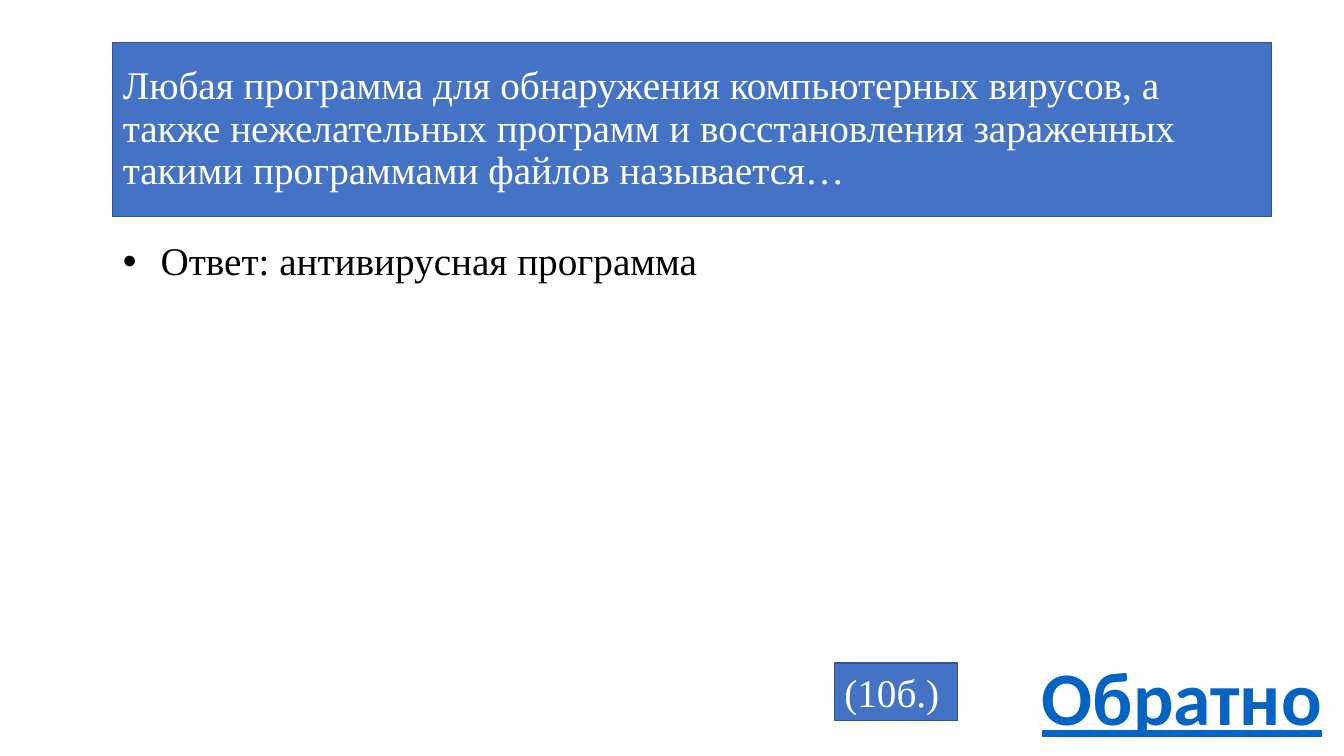
import pptx
import pptx.dml.color
import pptx.enum.shapes
import pptx.enum.text
import pptx.oxml
import pptx.oxml.ns
import pptx.util
from pptx.util import Cm

COLORS = {
    "panel": "4472C4",
    "border": "325491",
    "light": "FFFFFF",
    "dark": "000000",
    "link": "0563C1",
    "link_outline": "8497B0",
}
ALIGN = pptx.enum.text.PP_ALIGN
ANCHOR = pptx.enum.text.MSO_ANCHOR
AUTO_SIZE = pptx.enum.text.MSO_AUTO_SIZE


def rgb(name):
    """Return the named colour."""
    return pptx.dml.color.RGBColor.from_string(COLORS[name])


def place(shape, left, top, width, height):
    """Move and size a shape."""
    shape.left, shape.top, shape.width, shape.height = left, top, width, height


def paint_panel(shape):
    """Give a shape the blue fill and thin border."""
    shape.fill.solid()
    shape.fill.fore_color.rgb = rgb("panel")
    shape.line.color.rgb = rgb("border")
    shape.line.width = pptx.util.Pt(1)


def write_text(shape, text, color, size=28, font_name="Times New Roman",
               align=ALIGN.LEFT, anchor=ANCHOR.TOP, auto_size=AUTO_SIZE.NONE,
               wrap=True, line_spacing=1.0):
    """Write one formatted paragraph and return it."""
    frame = shape.text_frame
    frame.text = text
    frame.word_wrap = wrap
    frame.auto_size = auto_size
    frame.vertical_anchor = anchor
    paragraph = frame.paragraphs[0]
    paragraph.alignment = align
    paragraph.line_spacing = line_spacing
    paragraph.space_before = pptx.util.Pt(0)
    paragraph.font.name = font_name
    paragraph.font.size = pptx.util.Pt(size)
    paragraph.font.color.rgb = rgb(color)
    return paragraph


def remove_bullet(paragraph):
    """Remove the bullet and hanging indent of a paragraph."""
    properties = paragraph._p.get_or_add_pPr()
    properties.set("marL", "0")
    properties.set("indent", "0")
    properties.append(pptx.oxml.parse_xml(
        f"<a:buNone {pptx.oxml.ns.nsdecls('a')}/>"))


def outline_text(paragraph, color, width):
    """Draw a thin outline around the letters of a paragraph."""
    outline = (f"<a:ln {pptx.oxml.ns.nsdecls('a')} w='{pptx.util.Pt(width)}'>"
               f"<a:solidFill><a:srgbClr val='{COLORS[color]}'/></a:solidFill></a:ln>")
    for run in paragraph.runs:
        run._r.get_or_add_rPr().insert(0, pptx.oxml.parse_xml(outline))


def add_question(slide, text):
    """Fill the title with the question on a blue panel."""
    title = slide.shapes.title
    place(title, Cm(2.84), Cm(1.07), Cm(29.21), Cm(4.39))
    paint_panel(title)
    write_text(title, text, "light", anchor=ANCHOR.MIDDLE, line_spacing=0.9)


def add_answer(slide, text):
    """Fill the body with the answer."""
    body = slide.placeholders[1]
    place(body, Cm(2.84), Cm(5.97), Cm(29.21), Cm(12.09))
    remove_bullet(body.text_frame.paragraphs[0])
    write_text(body, text, "dark", line_spacing=0.9)


def add_back_label(slide, text):
    """Add the large underlined label in the corner."""
    label = slide.shapes.add_textbox(Cm(25.96), Cm(16.26), Cm(7.65), Cm(2.57))
    paragraph = write_text(label, text, "link", size=54, font_name="Calibri",
                           align=ALIGN.CENTER, wrap=False,
                           auto_size=AUTO_SIZE.SHAPE_TO_FIT_TEXT)
    paragraph.font.bold = True
    paragraph.font.underline = True
    outline_text(paragraph, "link_outline", 0.52)


def add_score(slide, text):
    """Add the blue badge with the score."""
    badge = slide.shapes.add_shape(pptx.enum.shapes.MSO_SHAPE.RECTANGLE,
                                   Cm(21.03), Cm(16.71), Cm(3.1), Cm(1.45))
    badge.shadow.inherit = False
    paint_panel(badge)
    write_text(badge, text, "light", auto_size=AUTO_SIZE.SHAPE_TO_FIT_TEXT)


def main():
    """Build and save the quiz slide."""
    presentation = pptx.Presentation()
    presentation.slide_width = Cm(33.87)
    presentation.slide_height = Cm(19.05)
    slide = presentation.slides.add_slide(presentation.slide_layouts[1])
    add_question(slide, "Любая программа для обнаружения компьютерных вирусов, "
                        "а также нежелательных программ и восстановления "
                        "зараженных такими программами файлов называется…")
    add_answer(slide, "Ответ: антивирусная программа")
    add_back_label(slide, "Обратно")
    add_score(slide, "(10б.)")
    presentation.save("out.pptx")


if __name__ == "__main__":
    main()
